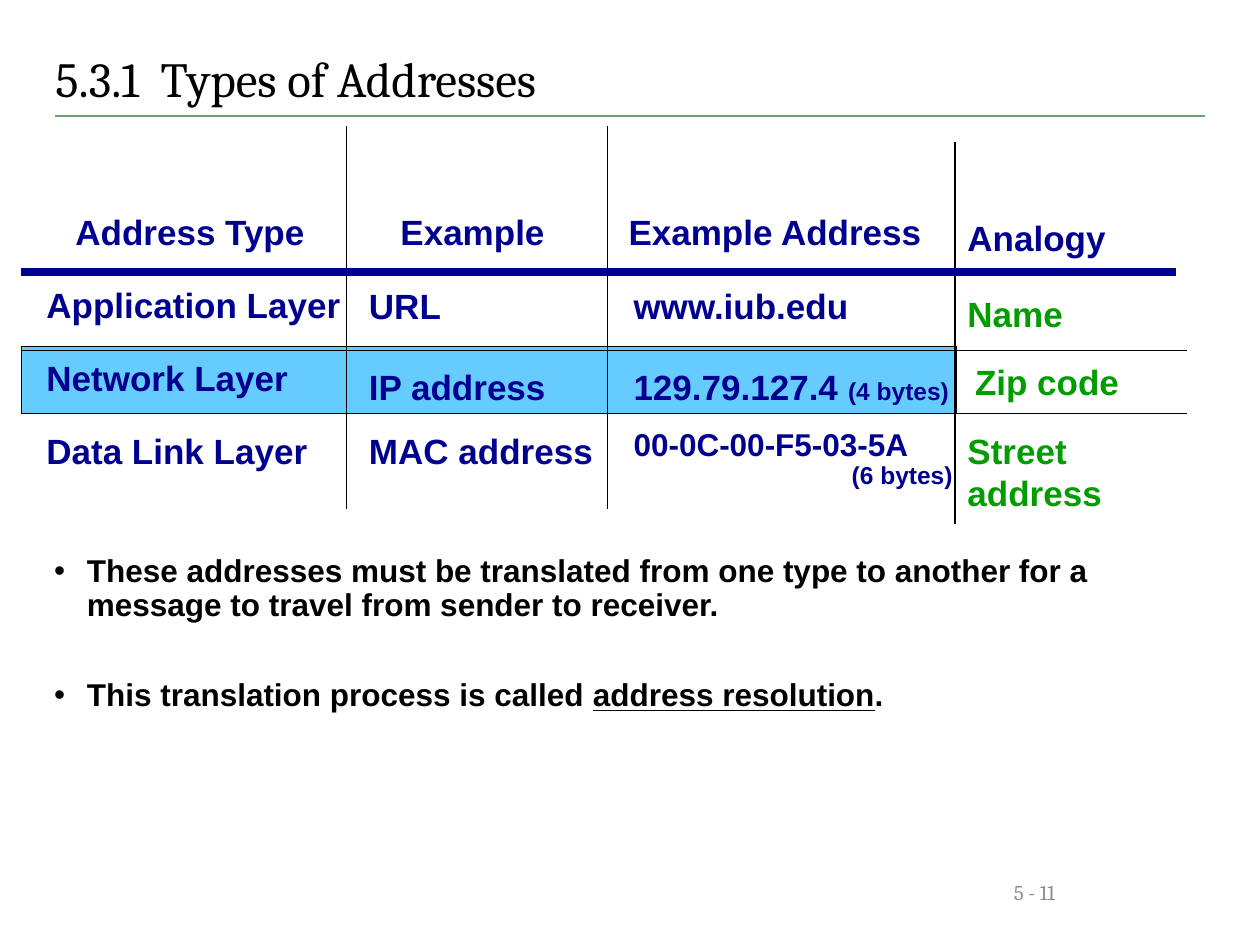
from lxml import etree
from pptx import Presentation
from pptx.dml.color import RGBColor
from pptx.enum.shapes import MSO_CONNECTOR as Connector, MSO_SHAPE as Shape
from pptx.enum.text import MSO_ANCHOR as Anchor, MSO_AUTO_SIZE as AutoSize, PP_ALIGN as Align
from pptx.oxml.ns import qn
from pptx.util import Inches, Pt

BLACK = RGBColor(0x00, 0x00, 0x00)
GREY = RGBColor(0x8C, 0x8C, 0x8C)
NAVY = RGBColor(0x00, 0x00, 0x90)
GREEN = RGBColor(0x00, 0x9C, 0x00)
SAGE = RGBColor(0x6E, 0xA1, 0x72)
SKY = RGBColor(0x66, 0xCC, 0xFF)

# The page is a grid of 100 columns by 75 rows
COLUMNS, ROWS = 100, 75


class Page:
    HEADING = dict(name="Cambria", size=Pt(28), bold=False)
    FOOTER = dict(name="Cambria", size=Pt(12))
    CELL = dict(name="Arial", size=Pt(20), bold=True)
    ADDRESS = dict(CELL, size=Pt(18))
    BODY = dict(CELL, size=Pt(18))
    SMALL = dict(size=Pt(14))

    def __init__(self, deck):
        self.page = deck.slides.add_slide(deck.slide_layouts[1])
        self.column = deck.slide_width / COLUMNS
        self.row = deck.slide_height / ROWS

    def grid(self, left, top, width, height):
        return [round(value * unit) for value, unit in
                zip((left, top, width, height), (self.column, self.row) * 2)]

    def apply(self, target, values):
        for key, value in values.items():
            setattr(target, key, value)

    def add_spans(self, para, spans, style, color):
        """Spans are strings, or pairs of a string and its own format values."""
        self.apply(para.font, style)
        para.font.color.rgb = color
        for item in spans:
            text, extra = (item, {}) if isinstance(item, str) else item
            span = para.add_run()
            span.text = text
            self.apply(span.font, {**style, **extra})
            span.font.color.rgb = color

    def fill_box(self, box, paras, style, color, layout=(), **frame):
        """Layout holds one dict of paragraph values for each paragraph."""
        self.apply(box.text_frame, dict(word_wrap=True, auto_size=AutoSize.NONE, **frame))
        for index, spans in enumerate(paras):
            para = box.text_frame.paragraphs[0] if index == 0 else box.text_frame.add_paragraph()
            if layout:
                self.apply(para, layout[index])
            self.add_spans(para, spans, style, color)

    def text(self, place, paras, style, color, layout=(), **frame):
        box = self.page.shapes.add_textbox(*self.grid(*place))
        self.fill_box(box, paras, style, color, layout, **frame)

    def placeholder(self, index, place):
        box = self.page.placeholders[index]
        self.apply(box, dict(zip(("left", "top", "width", "height"), self.grid(*place))))
        return box

    def title(self, place, text):
        self.fill_box(self.placeholder(0, place), [[text]], self.HEADING, BLACK,
                      [dict(alignment=Align.LEFT)], vertical_anchor=Anchor.BOTTOM,
                      margin_left=0, margin_top=0, margin_right=0, margin_bottom=Inches(0.05))

    def bullets(self, place, paras, gap):
        box = self.placeholder(1, place)
        layout = [dict(line_spacing=0.9, space_before=gap if index else Pt(0))
                  for index in range(len(paras))]
        self.fill_box(box, paras, self.BODY, BLACK, layout, vertical_anchor=Anchor.TOP)
        for para in box.text_frame.paragraphs:
            props = para._p.get_or_add_pPr()
            props.set("marL", str(Inches(0.26)))
            props.set("indent", str(-Inches(0.26)))
            bullet = etree.Element(qn("a:buChar"), char="•")
            props.find(qn("a:defRPr")).addprevious(bullet)

    def line(self, start, end, color=BLACK, weight=0.75):
        link = self.page.shapes.add_connector(Connector.STRAIGHT, *self.grid(*start, *end))
        link.line.color.rgb = color
        link.line.width = Pt(weight)
        etree.SubElement(link._element.spPr, qn("a:effectLst"))

    def band(self, place, fill):
        box = self.page.shapes.add_shape(Shape.RECTANGLE, *self.grid(*place))
        box.shadow.inherit = False
        box.fill.solid()
        box.fill.fore_color.rgb = fill
        box.line.color.rgb = BLACK
        box.line.width = Pt(0.75)


def main():
    deck = Presentation()
    deck.slide_width, deck.slide_height = Inches(10), Inches(7.5)
    page = Page(deck)

    # Title, rule and page number
    page.line((4.4, 9.2), (95.6, 9.2), SAGE, 1.5)
    page.title((4.4, 5.6, 91.2, 3.4), "5.3.1  Types of Addresses")
    page.text((71.7, 68.3, 20.8, 5), [["5 - 11"]], page.FOOTER, GREY,
              [dict(alignment=Align.CENTER)], vertical_anchor=Anchor.MIDDLE)

    # Highlighted network layer row
    page.band((1.7, 27.5, 74.2, 5.3), SKY)

    # Column headings
    for left, top, width, heading in ((5, 16.2, 22, "Address Type"),
                                      (30.8, 16.2, 15, "Example"),
                                      (48.9, 16.2, 28, "Example Address"),
                                      (75.8, 16.7, 15, "Analogy")):
        page.text((left, top, width, 4.9), [[heading]], page.CELL, NAVY)

    # Cells: left and width of each column, then top and text of each row
    columns = (
        (2.7, 28.6, NAVY, ((22, "Application Layer"), (27.8, "Network Layer"),
                           (33.6, "Data Link Layer"))),
        (28.3, 21, NAVY, ((22.1, "URL"), (28.5, "IP address"), (33.6, "MAC address"))),
        (49.3, 27.6, NAVY, ((22.1, "www.iub.edu"),)),
        (75.8, 15, GREEN, ((22.7, "Name"),)),
        (76.4, 15, GREEN, ((28.1, "Zip code"),)),
    )
    for left, width, color, cells in columns:
        for top, text in cells:
            page.text((left, top, width, 4.4), [[text]], page.CELL, color)

    # Cells with mixed sizes or two lines
    page.text((49.3, 28.5, 27.6, 4.4), [["129.79.127.4 ", ("(4 bytes)", page.SMALL)]],
              page.CELL, NAVY)
    page.text((49.3, 33.6, 27.3, 6.5), [["00-0C-00-F5-03-5A"], [("(6 bytes)", page.SMALL)]],
              page.ADDRESS, NAVY, [dict(line_spacing=0.9),
                                   dict(line_spacing=0.9, alignment=Align.RIGHT)])
    page.text((75.8, 33.6, 15, 7.7), [["Street"], ["address"]], page.CELL, GREEN)

    # Table rules
    for left, top, bottom in ((27.5, 10, 40.4), (48.2, 10, 40.4), (75.8, 11.3, 41.6)):
        page.line((left, top), (left, bottom))
    page.line((1.7, 21.6), (93.3, 21.6), NAVY, 4.5)
    for top in (27.8, 32.8):
        page.line((1.7, top), (94.2, top))

    # Remarks
    page.bullets((3.3, 43.6, 90.6, 18.2), [
        ["These addresses must be translated from one type to another "
         "for a message to travel from sender to receiver."],
        ["This translation process is called ",
         ("address resolution", dict(underline=True)), "."],
    ], gap=Pt(32))

    deck.save("out.pptx")


if __name__ == "__main__":
    main()
